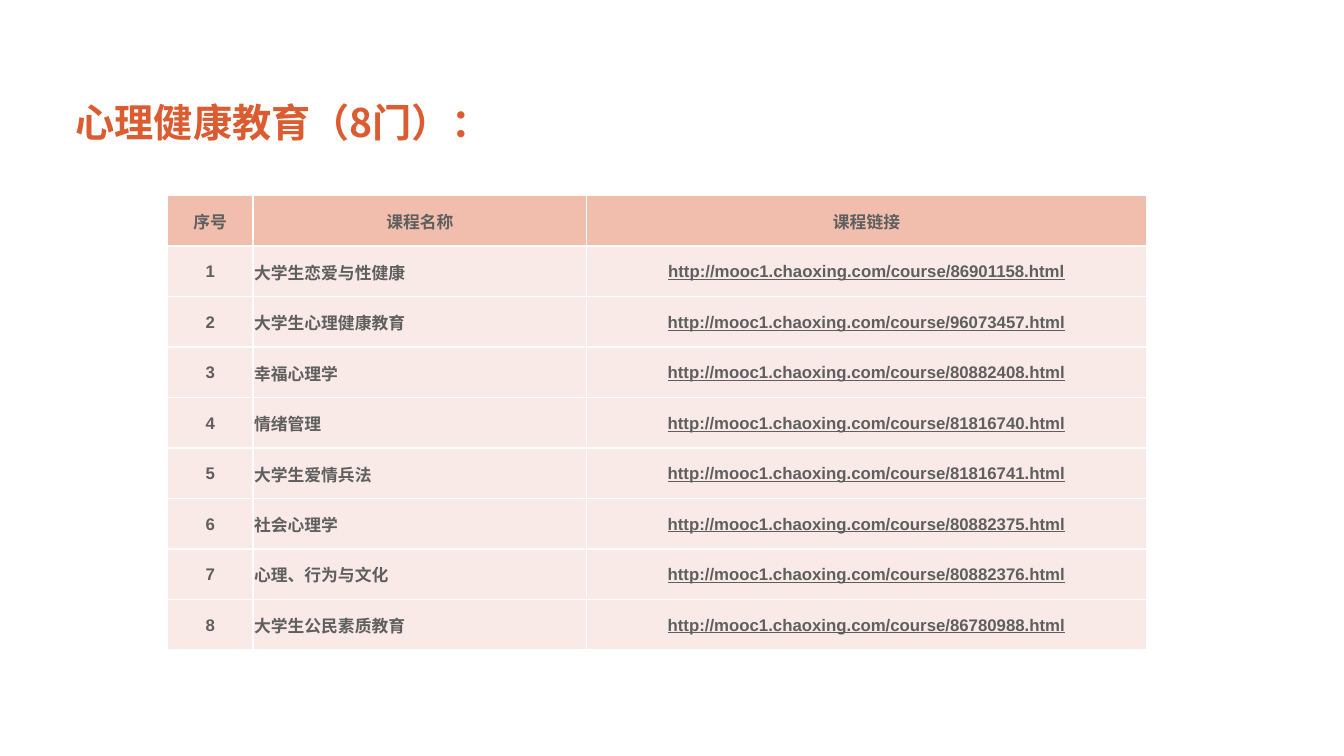
from lxml import etree
from pptx import Presentation
from pptx.dml.color import RGBColor
from pptx.enum import text
from pptx.oxml import ns
from pptx.util import Inches, Pt

# Content
TITLE = "心理健康教育（8门）："
HEADER = ("序号", "课程名称", "课程链接")
LINK = "http://mooc1.chaoxing.com/course/{}.html"
COURSES = [
    ("大学生恋爱与性健康", 86901158),
    ("大学生心理健康教育", 96073457),
    ("幸福心理学", 80882408),
    ("情绪管理", 81816740),
    ("大学生爱情兵法", 81816741),
    ("社会心理学", 80882375),
    ("心理、行为与文化", 80882376),
    ("大学生公民素质教育", 86780988),
]

# Style
ORANGE = RGBColor(0xDC, 0x5C, 0x31)
GREY = RGBColor(0x5F, 0x5F, 0x5F)
PEACH = RGBColor(0xF1, 0xBE, 0xAD)
PINK = RGBColor(0xF9, 0xEA, 0xE8)
WHITE = RGBColor(0xFF, 0xFF, 0xFF)
CJK_FONT = "Noto Sans CJK SC"
COL_WIDTHS = (0.85, 3.31, 5.55)
TABLE_HEIGHT = 4.51
NAME_COL, LINK_COL = 1, 2


def style_run(r, size, color, font):
    r.font.size = Pt(size)
    r.font.bold = True
    r.font.color.rgb = color
    r.font.name = font
    ea = etree.SubElement(r.font._element, ns.qn("a:ea"))
    ea.set("typeface", CJK_FONT)


def add_borders(cell, color, width):
    tc_pr = cell._tc.get_or_add_tcPr()
    for side in ("lnL", "lnR", "lnT", "lnB"):
        ln = etree.SubElement(tc_pr, ns.qn(f"a:{side}"), w=str(Pt(width)))
        fill = etree.SubElement(ln, ns.qn("a:solidFill"))
        etree.SubElement(fill, ns.qn("a:srgbClr"), val=str(color))


prs = Presentation()
prs.slide_width, prs.slide_height = Inches(13.33), Inches(7.5)
s = prs.slides.add_slide(prs.slide_layouts[5])

# Title
sp = s.shapes.title
sp.left, sp.top = Inches(0.65), Inches(0.73)
sp.width, sp.height = Inches(11.9), Inches(0.77)
tf = sp.text_frame
tf.text = TITLE
tf.vertical_anchor = text.MSO_ANCHOR.BOTTOM
p = tf.paragraphs[0]
p.alignment = text.PP_ALIGN.LEFT
p.line_spacing = 0.9
style_run(p.runs[0], 28, ORANGE, CJK_FONT)

# Course table
rows = [HEADER] + [(str(n), name, LINK.format(code))
                   for n, (name, code) in enumerate(COURSES, 1)]
table = s.shapes.add_table(len(rows), len(HEADER), Inches(1.66), Inches(1.94),
                           Inches(sum(COL_WIDTHS)), Inches(TABLE_HEIGHT)).table
for column, width in zip(table.columns, COL_WIDTHS):
    column.width = Inches(width)

for i, row in enumerate(rows):
    for j, value in enumerate(row):
        cell = table.cell(i, j)
        cell.text = value
        cell.vertical_anchor = text.MSO_ANCHOR.MIDDLE
        cell.margin_left = cell.margin_right = cell.margin_top = Inches(0.01)
        cell.margin_bottom = 0
        add_borders(cell, WHITE, 1)
        cell.fill.solid()
        cell.fill.fore_color.rgb = PEACH if i == 0 else PINK
        p = cell.text_frame.paragraphs[0]
        is_name = i > 0 and j == NAME_COL
        p.alignment = text.PP_ALIGN.LEFT if is_name else text.PP_ALIGN.CENTER
        r = p.runs[0]
        style_run(r, 12, GREY, "Arial")
        r.font.underline = i > 0 and j == LINK_COL

prs.save("out.pptx")
